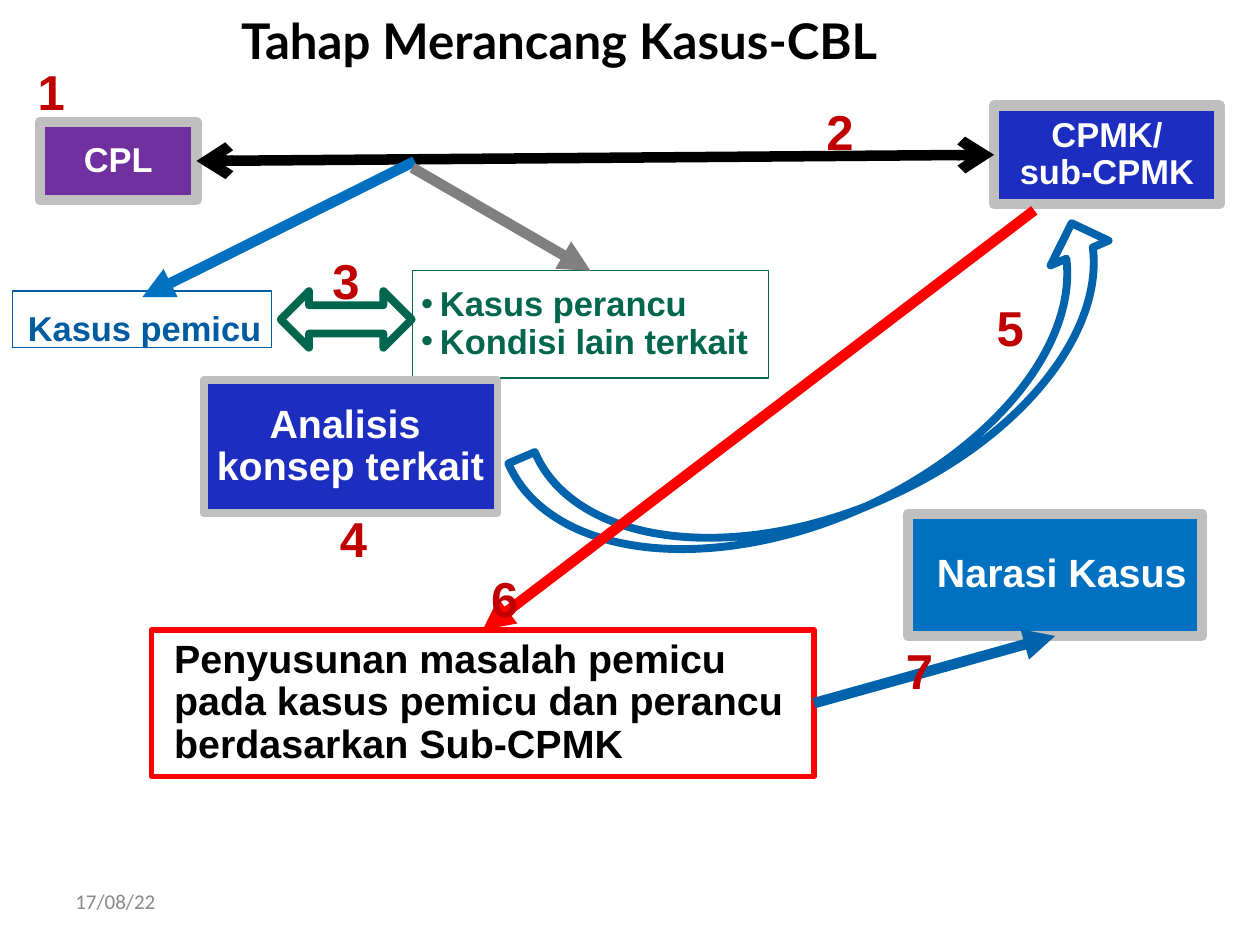
from lxml import etree
from pptx import Presentation
from pptx.dml.color import RGBColor
from pptx.enum import shapes, text
from pptx.oxml import ns
from pptx.util import Cm, Pt

WHITE = RGBColor(0xFF, 0xFF, 0xFF)
BLACK = RGBColor(0, 0, 0)
SILVER = RGBColor(0xBF, 0xBF, 0xBF)
GREY = RGBColor(0x80, 0x80, 0x80)
DATE_GREY = RGBColor(0x89, 0x89, 0x89)
PURPLE = RGBColor(0x70, 0x30, 0xA0)
NAVY = RGBColor(0x1C, 0x2D, 0xC0)
SKY = RGBColor(0, 0x70, 0xC0)
BLUE = RGBColor(0, 0x63, 0xAC)
DEEP_BLUE = RGBColor(0, 0x5C, 0xA1)
GREEN = RGBColor(0, 0x66, 0x4D)
RED = RGBColor(0xFF, 0, 0)
DARK_RED = RGBColor(0xC0, 0, 0)

CENTER, LEFT = text.PP_ALIGN.CENTER, text.PP_ALIGN.LEFT
TOP, SIDE_LEFT, BOTTOM, SIDE_RIGHT = range(4)

# name: (place, fill, line colour, line width, lines, size, colour, alignment)
STAGES = {
    "cpl": ((0.81, 2.46, 3.15, 1.57), PURPLE, SILVER, 6, ["CPL"], 19.7, WHITE, CENTER),
    "pemicu": ((0.25, 5.87, 5.23, 1.14), None, DEEP_BLUE, 0.75, [], 19.7, DEEP_BLUE, CENTER),
    "cpmk": ((20.04, 2.13, 4.55, 1.98), NAVY, SILVER, 6,
             ["CPMK/", "sub-CPMK"], 19.7, WHITE, CENTER),
    "perancu": ((8.31, 5.46, 7.19, 2.16), None, GREEN, 0.75,
                ["Kasus perancu", "Kondisi lain terkait"], 19.7, GREEN, LEFT),
    "analisis": ((4.11, 7.67, 5.92, 2.67), NAVY, SILVER, 4.5,
                 ["Analisis ", "konsep terkait "], 22.5, WHITE, CENTER),
    "masalah": ((3.05, 12.7, 13.36, 2.95), None, RED, 3,
                ["Penyusunan masalah pemicu pada kasus pemicu dan perancu "
                 "berdasarkan Sub-CPMK"], 22.5, BLACK, LEFT),
    "narasi": ((18.31, 10.36, 5.92, 2.46), SKY, SILVER, 6,
               ["Narasi Kasus"], 22.5, WHITE, CENTER),
}
INDENTS = {"perancu": (0.38, -0.38), "masalah": (0.28, 0), "narasi": (0.28, 0)}
BULLETED = {"perancu"}

LINKS = [
    (("cpl", SIDE_RIGHT), ("cpmk", SIDE_LEFT), BLACK, {"headEnd": "arrow", "tailEnd": "arrow"}),
    ((8.36, 3.25), (2.87, 5.99), SKY, {"tailEnd": "triangle"}),
    ((8.31, 3.38), ("perancu", TOP), GREY, {"tailEnd": "triangle"}),
    ((20.85, 4.24), ("masalah", TOP), RED, {"tailEnd": "triangle"}),
    (("masalah", SIDE_RIGHT), ("narasi", BOTTOM), BLUE, {"tailEnd": "triangle"}),
]

STEPS = {
    "1": (0.51, 1.12), "2": (16.41, 1.93), "3": (6.45, 4.93), "4": (6.6, 10.13),
    "5": (19.84, 5.87), "6": (9.65, 11.33), "7": (18.01, 12.78),
}
STEP_SIZE = (1.07, 1.45)


def lengths(values):
    return [Cm(value) for value in values]


def write(frame, lines, size, color, align, font="Arial", bold=True, spacing=None):
    frame.word_wrap = True
    frame.text = "\n".join(lines)
    for paragraph in frame.paragraphs:
        paragraph.alignment = align
        paragraph.line_spacing = spacing
        for run in paragraph.runs:
            run.font.size, run.font.name, run.font.bold = Pt(size), font, bold
            run.font.color.rgb = color


def tighten(frame):
    frame.margin_left = frame.margin_right = Cm(0.18)
    frame.margin_top = frame.margin_bottom = Cm(0.1)
    frame.vertical_anchor = text.MSO_ANCHOR.MIDDLE


def indent(frame, margin, first, bulleted):
    for paragraph in frame.paragraphs:
        properties = paragraph._p.get_or_add_pPr()
        properties.set("marL", str(Cm(margin)))
        properties.set("indent", str(Cm(first)))
        if bulleted:
            etree.SubElement(properties, ns.qn("a:buFont")).set("typeface", "Arial")
            etree.SubElement(properties, ns.qn("a:buChar")).set("char", "•")


def add_outline(slide, preset, place, fill, color, width):
    shape = slide.shapes.add_shape(preset, *lengths(place))
    shape.shadow.inherit = False
    if fill is None:
        shape.fill.background()
    else:
        shape.fill.solid()
        shape.fill.fore_color.rgb = fill
    shape.line.color.rgb = color
    shape.line.width = Pt(width)
    return shape


def add_label(slide, place, words, size, color, align, **style):
    label = slide.shapes.add_textbox(*lengths(place))
    write(label.text_frame, [words], size, color, align, **style)
    return label.text_frame


def add_link(slide, boxes, start, end, color, heads):
    link = slide.shapes.add_connector(shapes.MSO_CONNECTOR.STRAIGHT, 0, 0, 0, 0)
    if start[0] in boxes:
        link.begin_connect(boxes[start[0]], start[1])
    else:
        link.begin_x, link.begin_y = lengths(start)
    if end[0] in boxes:
        link.end_connect(boxes[end[0]], end[1])
    else:
        link.end_x, link.end_y = lengths(end)
    link.line.color.rgb = color
    link.line.width = Pt(6)
    for tag, kind in heads.items():
        etree.SubElement(link.line._get_or_add_ln(), ns.qn("a:" + tag)).set("type", kind)
    etree.SubElement(link._element.spPr, ns.qn("a:effectLst"))


def main():
    deck = Presentation()
    deck.slide_width, deck.slide_height = Cm(25.4), Cm(19.05)
    slide = deck.slides.add_slide(deck.slide_layouts[6])

    boxes = {}
    for name, (place, fill, edge, width, lines, size, color, align) in STAGES.items():
        box = add_outline(slide, shapes.MSO_SHAPE.RECTANGLE, place, fill, edge, width)
        boxes[name] = box
        if lines:
            write(box.text_frame, lines, size, color, align, spacing=0.9)
            tighten(box.text_frame)
        if name in INDENTS:
            indent(box.text_frame, *INDENTS[name], name in BULLETED)

    tighten(add_label(slide, (0.3, 5.87, 5.23, 1.57), "Kasus pemicu", 19.7,
                      DEEP_BLUE, CENTER, spacing=0.9))

    feedback = add_outline(slide, shapes.MSO_SHAPE.CURVED_UP_ARROW,
                           (10.44, 6.65, 12.98, 3.63), None, BLUE, 4.5)
    feedback.rotation = 336.9
    for position, value in enumerate((0.16, 0.35, 0.17)):
        feedback.adjustments[position] = value
    add_outline(slide, shapes.MSO_SHAPE.LEFT_RIGHT_ARROW,
                (5.66, 5.87, 2.64, 1.14), None, GREEN, 4.5)

    for link in LINKS:
        add_link(slide, boxes, *link)

    for number, corner in STEPS.items():
        add_label(slide, corner + STEP_SIZE, number, 28, DARK_RED, LEFT)

    add_label(slide, (2.87, 0.08, 16.81, 1.45), "Tahap Merancang Kasus-CBL", 28.1,
              BLACK, CENTER, font="Lato")
    date = add_label(slide, (1.27, 17.65, 5.92, 1.02), "17/08/22", 12, DATE_GREY, LEFT,
                     font="Calibri", bold=False)
    date.vertical_anchor = text.MSO_ANCHOR.MIDDLE

    deck.save("out.pptx")


if __name__ == "__main__":
    main()
